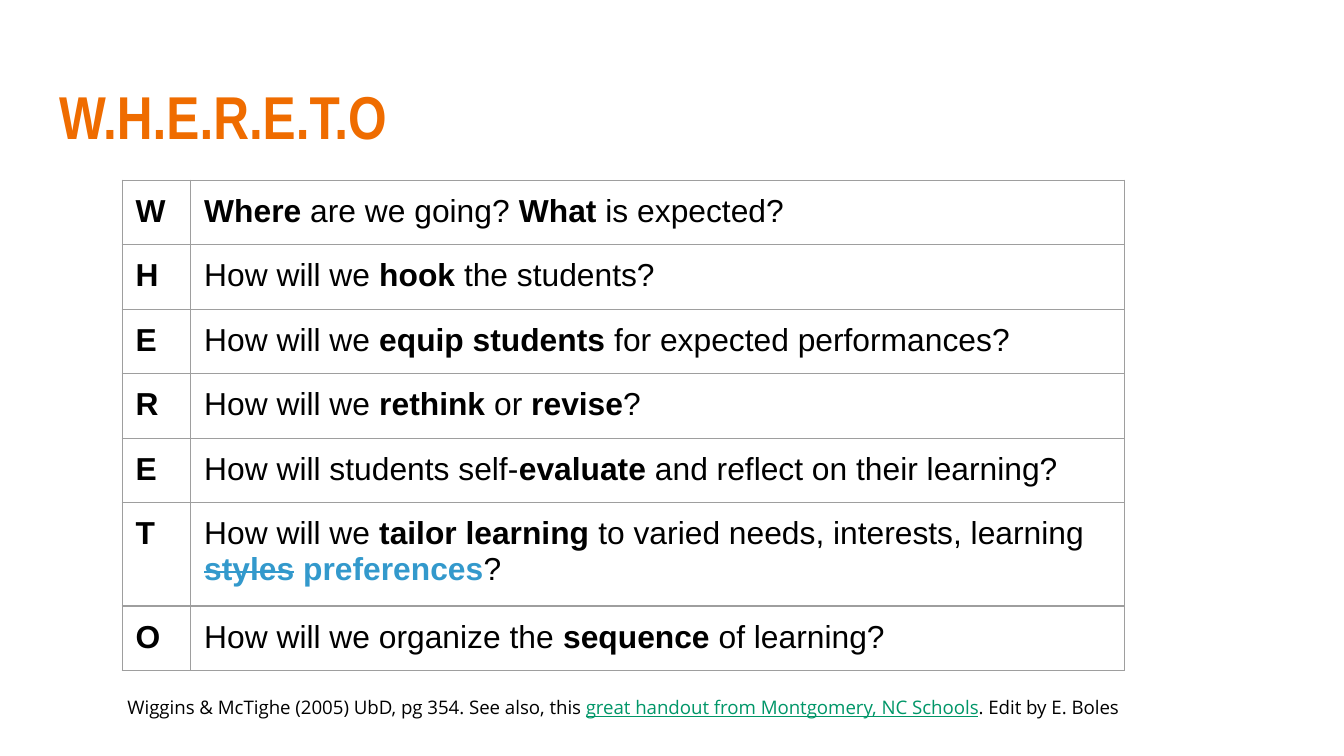
import pptx
import pptx.dml.color
import pptx.enum.text
import pptx.oxml
import pptx.oxml.ns
import pptx.util
from pptx.util import Inches

COLORS = {"title": "EF6C00", "text": "000000", "edit": "3399CC", "link": "009668", "border": "9E9E9E"}
ROWS = [
    ("W", "*Where* are we going? *What* is expected?"),
    ("H", "How will we *hook* the students?"),
    ("E", "How will we *equip students* for expected performances?"),
    ("R", "How will we *rethink *or* revise*?"),
    ("E", "How will students self-*evaluate* and reflect on their learning?"),
    ("T", "How will we *tailor learning* to varied needs, interests, learning *styles** preferences*?"),
    ("O", "How will we organize the *sequence* of learning?"),
]
EDITS = ("styles", " preferences")


def add_span(para, text, color, **formats):
    span = para.add_run()
    span.text = text
    span.font.color.rgb = pptx.dml.color.RGBColor.from_string(COLORS[color])
    for name, value in formats.items():
        setattr(span.font, name, value)
    return span


def add_border(cell, side):
    line = pptx.oxml.parse_xml(
        f'<a:{side} {pptx.oxml.ns.nsdecls("a")} w="{pptx.util.Pt(0.75)}"><a:solidFill>'
        f'<a:srgbClr val="{COLORS["border"]}"/></a:solidFill></a:{side}>'
    )
    cell._tc.get_or_add_tcPr().append(line)


deck = pptx.Presentation()
deck.slide_width = Inches(10)
deck.slide_height = Inches(10) * 9 // 16
page = deck.slides.add_slide(deck.slide_layouts[5])

title = page.shapes.title
title.left, title.top, title.width, title.height = map(Inches, (0.34, 0.49, 9.32, 0.77))
footnote = page.shapes.add_textbox(*map(Inches, (0.85, 5.08, 8.07, 0.37)))
frame_format = {
    "word_wrap": True,
    "auto_size": pptx.enum.text.MSO_AUTO_SIZE.NONE,
    "vertical_anchor": pptx.enum.text.MSO_ANCHOR.TOP,
}
margins = dict.fromkeys(("margin_left", "margin_top", "margin_right", "margin_bottom"), Inches(0.1))
for box in (title, footnote):
    for name, value in (frame_format | margins).items():
        setattr(box.text_frame, name, value)
    box.text_frame.paragraphs[0].alignment = pptx.enum.text.PP_ALIGN.LEFT

add_span(title.text_frame.paragraphs[0], "W.H.E.R.E.T.O", "title",
         name="Arial Narrow", size=pptx.util.Pt(32.4), bold=True)

note = footnote.text_frame.paragraphs[0]
for text, color, underline in (
    ("Wiggins & McTighe (2005) UbD, pg 354. See also, this ", "text", False),
    ("great handout from Montgomery, NC Schools", "link", True),
    (". Edit by E. Boles", "text", False),
):
    add_span(note, text, color, name="Open Sans", size=pptx.util.Pt(10), underline=underline)

table = page.shapes.add_table(len(ROWS), 2, *map(Inches, (0.91, 1.34, 7.46, 3.65))).table
table.first_row = table.horz_banding = False
for column, width in zip(table.columns, (0.51, 6.95)):
    column.width = Inches(width)

for row, (letter, question) in zip(table.rows, ROWS):
    row.height = Inches(0.77 if letter == "T" else 0.48)
    for cell, marked in zip(row.cells, (f"*{letter}*", question)):
        for name, value in margins.items():
            setattr(cell, name, value)
        for side in ("lnL", "lnR", "lnT", "lnB"):
            add_border(cell, side)
        cell.fill.background()
        para = cell.text_frame.paragraphs[0]
        for index, text in enumerate(marked.split("*")):
            if text:
                span = add_span(para, text, "edit" if text in EDITS else "text",
                                name="Arial", size=pptx.util.Pt(17), bold=index % 2 == 1)
                if text == "styles":
                    span.font._element.set("strike", "sngStrike")

deck.save("out.pptx")
